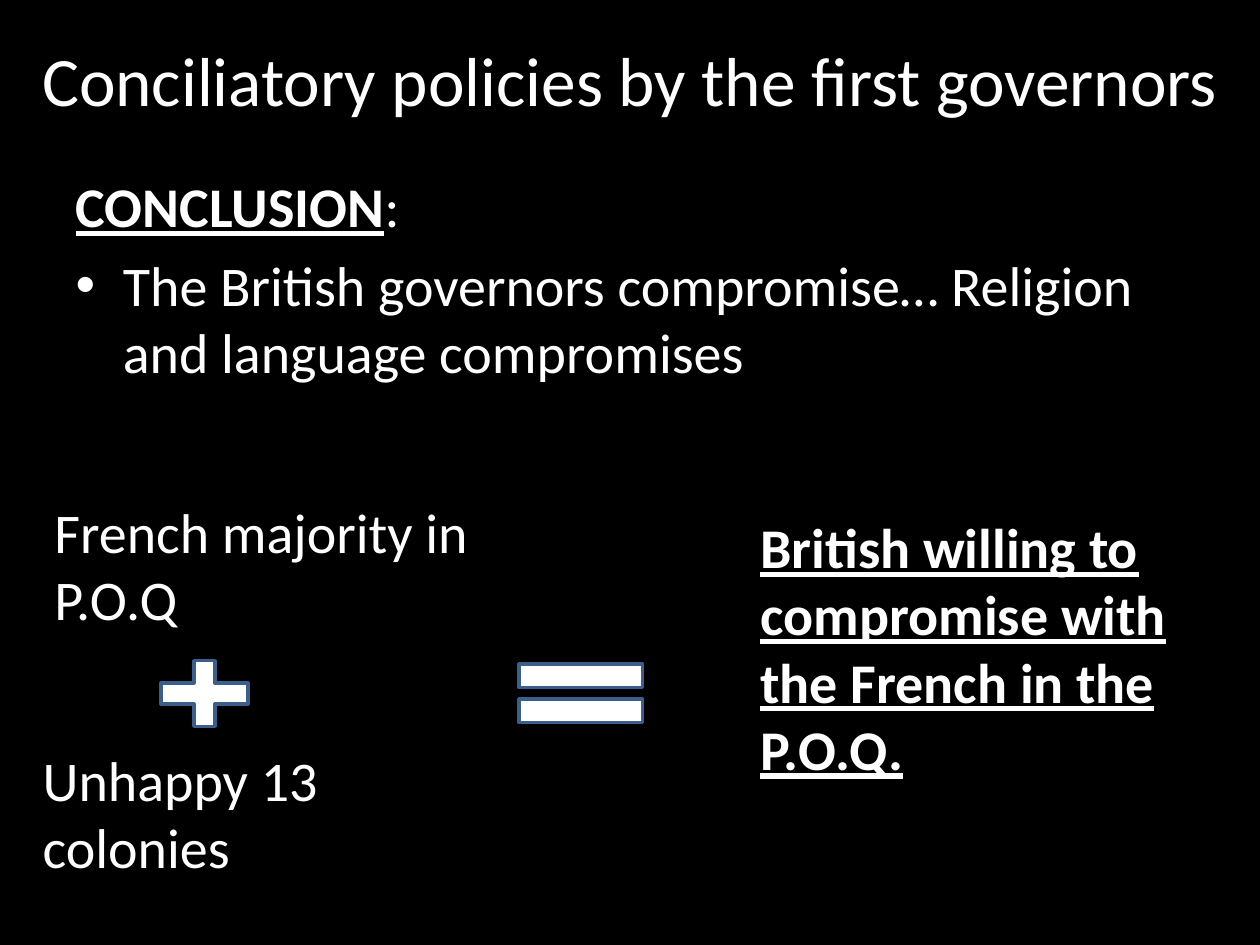
from dataclasses import dataclass

from lxml.etree import SubElement
from pptx import Presentation
from pptx.dml.color import RGBColor
from pptx.enum.shapes import MSO_SHAPE
from pptx.enum.text import MSO_ANCHOR, MSO_AUTO_SIZE, PP_ALIGN
from pptx.oxml.ns import qn
from pptx.util import Inches, Pt


@dataclass(frozen=True)
class Theme:
    font: str = "Calibri"
    back: RGBColor = RGBColor(0x00, 0x00, 0x00)
    ink: RGBColor = RGBColor(0xFF, 0xFF, 0xFF)
    edge: RGBColor = RGBColor(0x3A, 0x5F, 0x8C)
    title: float = 39.6
    body: float = 32
    line: float = 2


THEME = Theme()
W, H = 10, 7.5


def add_text(p, text, size=THEME.body, strong=False):
    """Add a run; strong text is bold and underlined."""
    r = p.add_run()
    r.text = text
    f = r.font
    f.name, f.size, f.bold, f.underline = THEME.font, Pt(size), strong, strong
    f.color.rgb = THEME.ink


def place(sp, box):
    sp.left, sp.top, sp.width, sp.height = (Inches(v) for v in box)


def add_title(s, box, text):
    sp = s.shapes.title
    place(sp, box)
    tf = sp.text_frame
    tf.auto_size = MSO_AUTO_SIZE.NONE
    tf.vertical_anchor = MSO_ANCHOR.MIDDLE
    p = tf.paragraphs[0]
    p.alignment = PP_ALIGN.CENTER
    add_text(p, text, THEME.title)


def add_conclusion(s, box, heading, point):
    sp = s.placeholders[1]
    place(sp, box)
    tf = sp.text_frame
    tf.auto_size = MSO_AUTO_SIZE.NONE
    # Heading without a bullet
    p = tf.paragraphs[0]
    SubElement(p._p.get_or_add_pPr(), qn("a:buNone"))
    add_text(p, heading, strong=True)
    add_text(p, ":")
    # Bulleted point
    add_text(tf.add_paragraph(), point)


def add_label(s, box, text, strong=False):
    tf = s.shapes.add_textbox(*(Inches(v) for v in box)).text_frame
    tf.word_wrap = True
    tf.auto_size = MSO_AUTO_SIZE.SHAPE_TO_FIT_TEXT
    add_text(tf.paragraphs[0], text, strong=strong)


def add_sign(s, box, kind):
    sp = s.shapes.add_shape(kind, *(Inches(v) for v in box))
    sp.shadow.inherit = False
    sp.fill.solid()
    sp.fill.fore_color.rgb = THEME.ink
    sp.line.color.rgb = THEME.edge
    sp.line.width = Pt(THEME.line)


def add_equation(s, box, first, second, result):
    """Stack two causes on the left, with their result on the right."""
    x, y, w, h = box

    def part(left, top, width, height):
        return x + left * w, y + top * h, width * w, height * h

    # Causes
    add_label(s, part(0.01, 0, 0.47, 0.37), first)
    add_label(s, part(0, 0.625, 0.39, 0.37), second)
    # Signs
    add_sign(s, part(0.097, 0.397, 0.1, 0.225), MSO_SHAPE.MATH_PLUS)
    add_sign(s, part(0.394, 0.384, 0.142, 0.25), MSO_SHAPE.MATH_EQUAL)
    # Result
    add_label(s, part(0.606, 0.038, 0.394, 0.717), result, strong=True)


def main():
    prs = Presentation()
    prs.slide_width, prs.slide_height = Inches(W), Inches(H)
    s = prs.slides.add_slide(prs.slide_layouts[1])
    s.background.fill.solid()
    s.background.fill.fore_color.rgb = THEME.back

    add_title(s, (0, 0, W, H / 6), "Conciliatory policies by the first governors")
    add_conclusion(
        s, (0.05 * W, 0.175 * H, 0.9 * W, 0.66 * H), "CONCLUSION",
        "The British governors compromise… Religion and language compromises")
    add_equation(
        s, (0.024 * W, 0.52 * H, 0.94 * W, 0.42 * H),
        "French majority in P.O.Q", "Unhappy 13 colonies",
        "British willing to compromise with the French in the P.O.Q.")
    prs.save("out.pptx")


if __name__ == "__main__":
    main()
